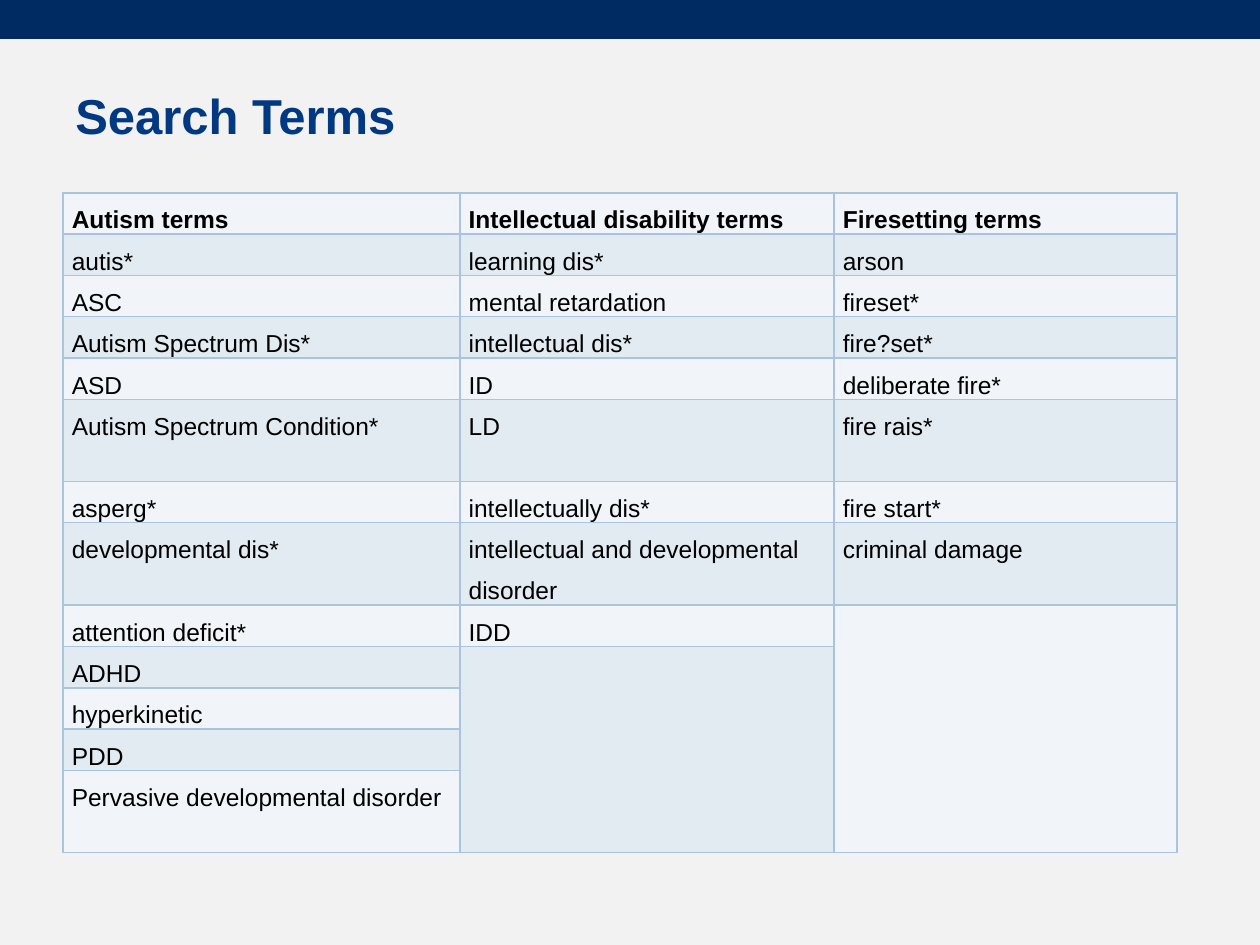
"""Build the Search Terms slide: a title above a three-column table of terms."""
from itertools import product

from lxml.etree import SubElement
from pptx import Presentation
from pptx.dml.color import RGBColor
from pptx.enum.shapes import MSO_SHAPE
from pptx.enum.text import MSO_ANCHOR, PP_ALIGN
from pptx.oxml.ns import qn
from pptx.util import Inches, Pt

COLOURS = {"page": "F2F2F2", "bar": "002A62", "title": "003882", "text": "000000",
           "border": "AAC4DE", "light": "F1F5F9", "dark": "E2EAF2"}
TITLE = "Search Terms"
TERMS = {
    "Autism terms": [
        "autis*", "ASC", "Autism Spectrum Dis*", "ASD", "Autism Spectrum Condition*",
        "asperg*", "developmental dis*", "attention deficit*", "ADHD", "hyperkinetic",
        "PDD", "Pervasive developmental disorder"],
    "Intellectual disability terms": [
        "learning dis*", "mental retardation", "intellectual dis*", "ID", "LD",
        "intellectually dis*", "intellectual and developmental disorder", "IDD"],
    "Firesetting terms": [
        "arson", "fireset*", "fire?set*", "deliberate fire*", "fire rais*",
        "fire start*", "criminal damage"],
}
LEFT_ALIGNED = {"intellectual and developmental disorder", "PDD",
                "Pervasive developmental disorder"}
COLUMN_WIDTHS = [3.15, 2.97, 2.72]
TALL_ROWS = {5, 7, 12}
ROW_HEIGHT, TALL_HEIGHT = 0.31, 0.65
MARGINS = {"margin_left": 0.07, "margin_right": 0.07, "margin_top": 0, "margin_bottom": 0}
TITLE_FONT = {"name": "Arial", "size": Pt(28), "bold": True}
CELL_FONT = {"name": "Arial", "size": Pt(14)}


def colour(name):
    return RGBColor.from_string(COLOURS[name])


def paint(target, name):
    target.fill.solid()
    target.fill.fore_color.rgb = colour(name)


def write(paragraph, text, formats, colour_name):
    span = paragraph.add_run()
    span.text = text
    span.font.color.rgb = colour(colour_name)
    for key, value in formats.items():
        setattr(span.font, key, value)


def add_borders(cell):
    properties = cell._tc.get_or_add_tcPr()
    for position, side in enumerate(("lnL", "lnR", "lnT", "lnB")):
        line = SubElement(properties, qn(f"a:{side}"), w=str(Pt(1)))
        fill = SubElement(line, qn("a:solidFill"))
        SubElement(fill, qn("a:srgbClr"), val=COLOURS["border"])
        properties.insert(position, line)


def add_bar(page, width):
    bar = page.shapes.add_shape(MSO_SHAPE.RECTANGLE, 0, 0, width, Inches(0.31))
    bar.shadow.inherit = False
    paint(bar, "bar")
    bar.line.fill.background()


def add_title(page):
    box = page.shapes.add_textbox(Inches(0.5), Inches(0.6), Inches(9.07), Inches(0.63))
    box.text_frame.word_wrap = True
    box.text_frame.vertical_anchor = MSO_ANCHOR.MIDDLE
    write(box.text_frame.paragraphs[0], TITLE, TITLE_FONT, "title")


def add_terms(page):
    columns = [[heading, *terms] for heading, terms in TERMS.items()]
    row_count = max(map(len, columns))
    heights = [TALL_HEIGHT if row in TALL_ROWS else ROW_HEIGHT for row in range(row_count)]
    table = page.shapes.add_table(
        row_count, len(columns), Inches(0.5), Inches(1.53),
        Inches(sum(COLUMN_WIDTHS)), Inches(sum(heights))).table
    for column, width in zip(table.columns, COLUMN_WIDTHS):
        column.width = Inches(width)
    for row, height in zip(table.rows, heights):
        row.height = Inches(height)
    for row, column in product(range(row_count), range(len(columns))):
        cell, terms = table.cell(row, column), columns[column]
        paint(cell, "dark" if min(row, len(terms)) % 2 else "light")
        add_borders(cell)
        for key, value in MARGINS.items():
            setattr(cell, key, Inches(value))
        if row < len(terms):
            paragraph = cell.text_frame.paragraphs[0]
            paragraph.line_spacing = 1.5
            paragraph.space_after = Pt(8)
            paragraph.alignment = (PP_ALIGN.LEFT if terms[row] in LEFT_ALIGNED
                                   else PP_ALIGN.JUSTIFY)
            write(paragraph, terms[row], {**CELL_FONT, "bold": row == 0}, "text")
    for column, terms in enumerate(columns):
        if len(terms) < row_count:
            table.cell(len(terms), column).merge(table.cell(row_count - 1, column))


def main():
    deck = Presentation()
    deck.slide_width, deck.slide_height = Inches(10), Inches(7.5)
    page = deck.slides.add_slide(deck.slide_layouts[6])
    paint(page.background, "page")
    add_bar(page, deck.slide_width)
    add_terms(page)
    add_title(page)
    deck.save("out.pptx")


if __name__ == "__main__":
    main()
